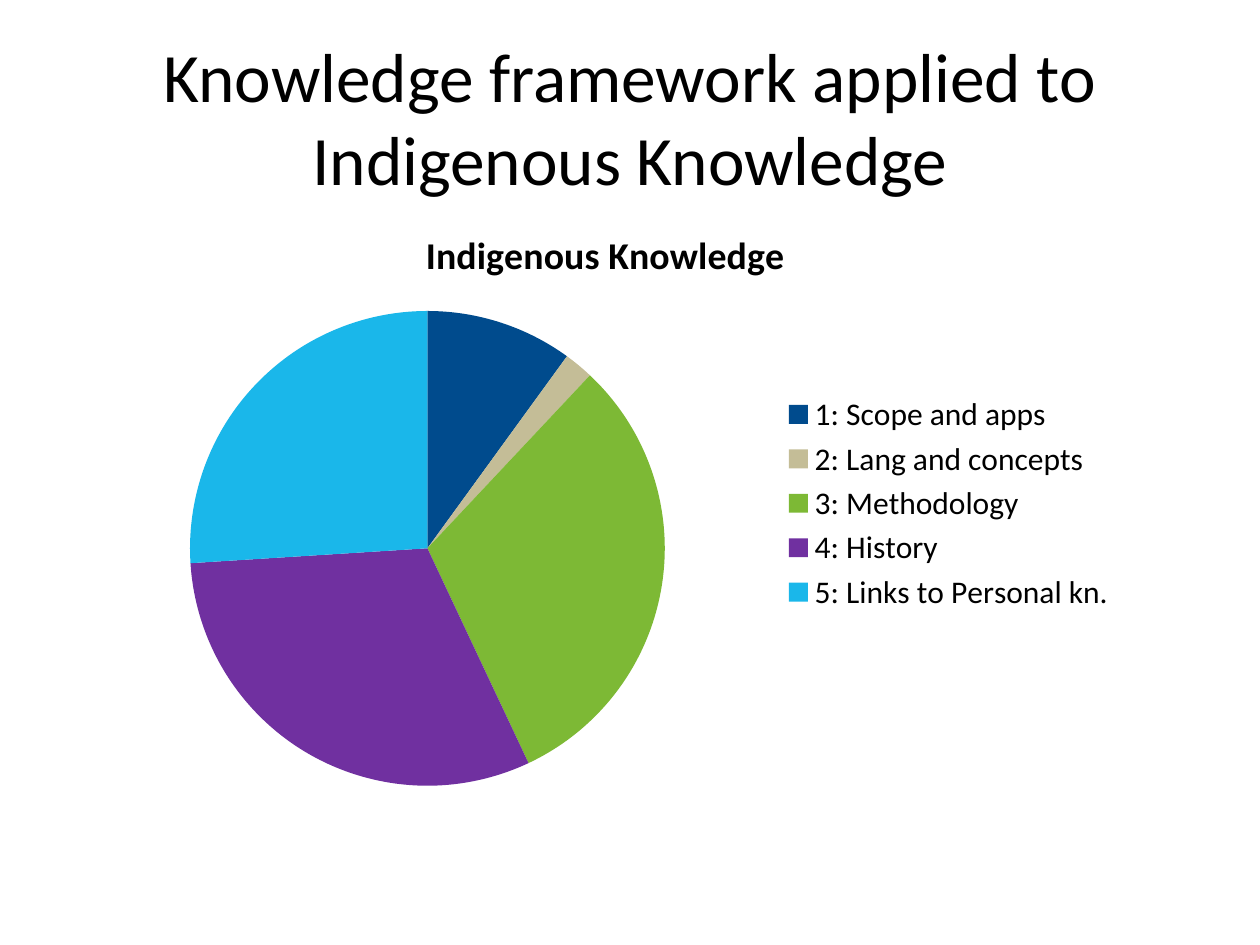
"""Build a slide with a pie chart of the Indigenous Knowledge framework."""
from lxml import etree
from pptx import Presentation
from pptx.chart.data import CategoryChartData
from pptx.dml.color import RGBColor
from pptx.enum.chart import XL_CHART_TYPE, XL_LEGEND_POSITION
from pptx.enum.text import MSO_ANCHOR, PP_ALIGN
from pptx.oxml.ns import qn
from pptx.util import Inches, Pt

PIE = XL_CHART_TYPE.PIE
RIGHT = XL_LEGEND_POSITION.RIGHT
MIDDLE = MSO_ANCHOR.MIDDLE
CENTER = PP_ALIGN.CENTER

COLORS = {
    "text": "000000",
    "scope": "004B8D",
    "language": "C4BD97",
    "method": "7DB935",
    "history": "7030A0",
    "personal": "1AB7EA",
}
SLICES = [
    ("1: Scope and apps", 10, "scope"),
    ("2: Lang and concepts", 2, "language"),
    ("3: Methodology", 31, "method"),
    ("4: History", 31, "history"),
    ("5: Links to Personal kn.", 26, "personal"),
]
PLOT_LAYOUT = {"x": 0.1, "y": 0.18, "w": 0.46, "h": 0.79}


class SlideBuilder:
    """Hold the style and the current slide."""

    def __init__(self, prs, font="Calibri"):
        self.font = font
        self.s = prs.slides.add_slide(prs.slide_layouts[5])

    def color(self, name):
        return RGBColor.from_string(COLORS[name])

    def style(self, font, size, bold=False):
        values = {"name": self.font, "size": Pt(size), "bold": bold}
        for name, value in values.items():
            setattr(font, name, value)
        font.color.rgb = self.color("text")

    def title(self, text, box, size):
        sp = self.s.shapes.title
        for name, value in zip(("left", "top", "width", "height"), box):
            setattr(sp, name, Inches(value))
        tf = sp.text_frame
        tf.word_wrap = True
        tf.vertical_anchor = MIDDLE
        p = tf.paragraphs[0]
        p.alignment = CENTER
        r = p.add_run()
        r.text = text
        self.style(r.font, size)

    def pie(self, name, slices, box, size, title_size):
        data = CategoryChartData()
        data.categories = [label for label, _, _ in slices]
        data.add_series(name, [value for _, value, _ in slices])
        chart = self.s.shapes.add_chart(PIE, *map(Inches, box), data).chart
        self.style(chart.font, size)
        chart.has_title = True
        p = chart.chart_title.text_frame.paragraphs[0]
        r = p.add_run()
        r.text = name
        self.style(r.font, title_size, bold=True)
        chart.has_legend = True
        chart.legend.position = RIGHT
        chart.legend.include_in_layout = False
        plot = chart.plots[0]
        plot.vary_by_categories = True
        for i, (_, _, color) in enumerate(slices):
            fmt = plot.series[0].points[i].format
            fmt.fill.solid()
            fmt.fill.fore_color.rgb = self.color(color)
            fmt.line.fill.background()
        self.place_plot(chart)

    def place_plot(self, chart):
        area = next(chart.element.iter(qn("c:plotArea")))
        for old in area.findall(qn("c:layout")):
            area.remove(old)
        layout = etree.Element(qn("c:layout"))
        area.insert(0, layout)
        manual = etree.SubElement(layout, qn("c:manualLayout"))
        settings = {"layoutTarget": "inner", "xMode": "edge", "yMode": "edge"}
        for tag, value in {**settings, **PLOT_LAYOUT}.items():
            etree.SubElement(manual, qn(f"c:{tag}")).set("val", str(value))


def main():
    prs = Presentation()
    prs.slide_width, prs.slide_height = Inches(10), Inches(7.5)
    slide = SlideBuilder(prs)
    slide.title("Knowledge framework applied to Indigenous Knowledge",
                (0.5, 0.3, 9, 1.25), 39.6)
    slide.pie("Indigenous Knowledge", SLICES, (0.65, 1.61, 8.31, 4.77), 18, 21.6)
    prs.save("out.pptx")


if __name__ == "__main__":
    main()
